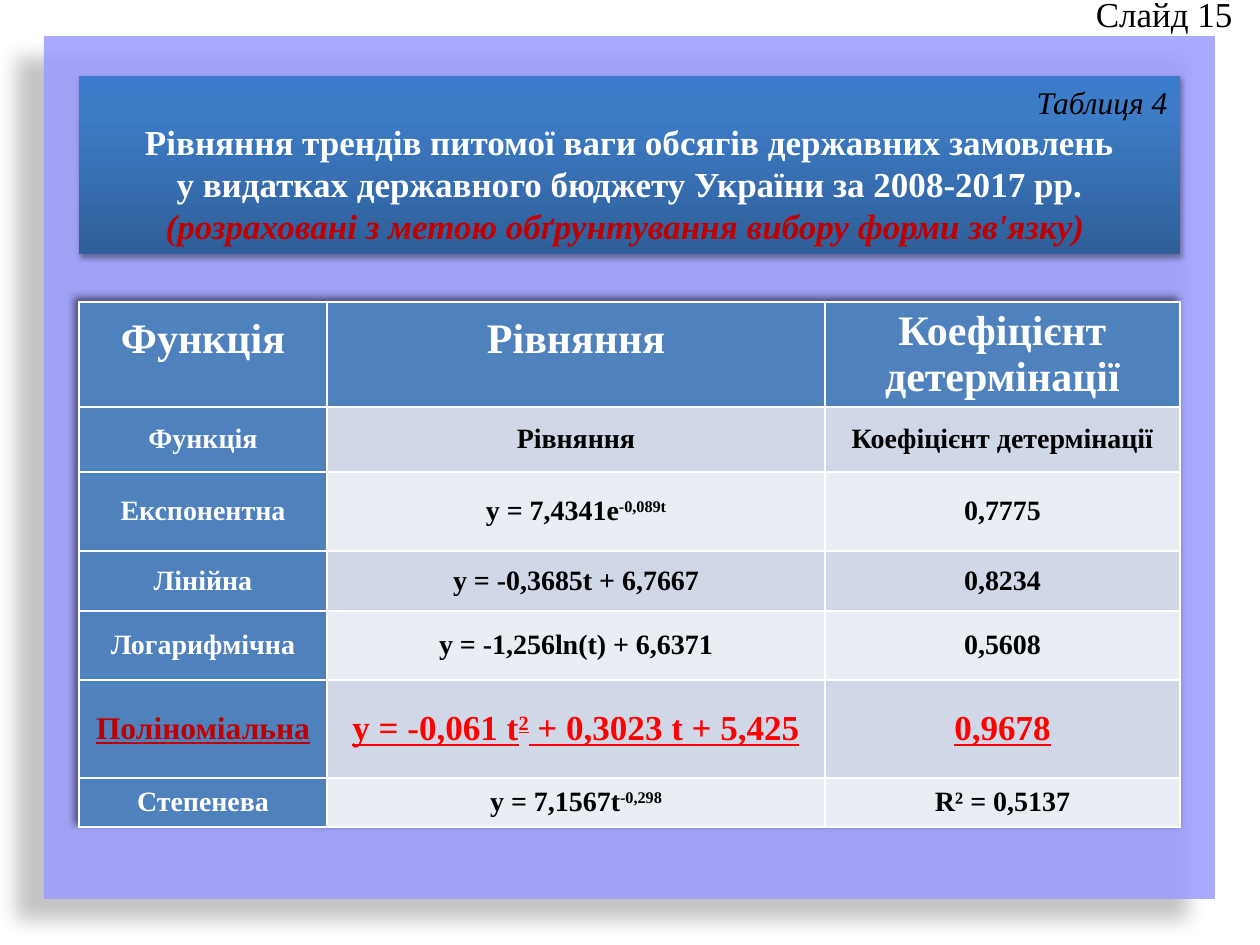
from dataclasses import dataclass
from lxml.etree import SubElement
from pptx import Presentation
from pptx.dml.color import RGBColor
from pptx.enum.shapes import MSO_SHAPE
from pptx.enum.text import MSO_ANCHOR, MSO_AUTO_SIZE, PP_ALIGN
from pptx.oxml.ns import qn
from pptx.util import Pt


@dataclass(frozen=True)
class Theme:
    font: str = "Times New Roman"
    black: str = "000000"
    white: str = "FFFFFF"
    dark: str = "C00000"
    red: str = "FF0000"
    panel: str = "9999FF"
    blue: str = "4F81BD"
    bands: tuple = ("D0D8E8", "E9EDF4")
    grad: tuple = ((0, "2F5F99"), (80, "3D7CC7"), (100, "3A7CCB"))
    head: int = 24
    large: int = 20
    mid: int = 18
    small: int = 16


THEME = Theme()
SCALE = 914400 / 126
COLS = (248, 498, 355)
HEIGHTS = (105, 65, 79, 60, 69, 98, 49)
ROWS = (
    ("Функція", "Рівняння", "Коефіцієнт детермінації"),
    ("Функція", "Рівняння", "Коефіцієнт детермінації"),
    ("Експонентна", "y = 7,4341e^-0,089t^", "0,7775"),
    ("Лінійна", "y = -0,3685t + 6,7667", "0,8234"),
    ("Логарифмічна", "y = -1,256ln(t) + 6,6371", "0,5608"),
    ("Поліноміальна", "y = -0,061 t^2^ + 0,3023 t + 5,425", "0,9678"),
    ("Степенева", "y = 7,1567t^-0,298^", "R² = 0,5137"),
)
BEST = 5


def px(n):
    return round(n * SCALE)


def place(shape, *box):
    shape.left, shape.top, shape.width, shape.height = map(px, box)


def style(para, size, color, align=PP_ALIGN.CENTER, bold=False, italic=False, under=False):
    para.alignment = align
    font = para.font
    font.name, font.size = THEME.font, Pt(size)
    font.bold, font.italic, font.underline = bold, italic, under
    font.color.rgb = RGBColor.from_string(color)


def paint(node, color, alpha=100):
    clr = SubElement(node, qn("a:srgbClr"), val=color)
    if alpha < 100:
        SubElement(clr, qn("a:alpha"), val=str(alpha * 1000))


def shade(effects, alpha, blur, dist, angle):
    node = SubElement(effects, qn("a:outerShdw"), blurRad=str(Pt(blur)),
                      dist=str(Pt(dist)), dir=str(angle * 60000),
                      algn="ctr", rotWithShape="0")
    paint(node, THEME.black, alpha)


def cast(shape, *shadow):
    shape.line.fill.background()
    shape.shadow.inherit = False
    shade(shape.element.spPr.find(qn("a:effectLst")), *shadow)


def add_panel(slide):
    panel = slide.shapes.add_shape(MSO_SHAPE.RECTANGLE, 0, 0, 0, 0)
    place(panel, 44, 36, 1171, 863)
    panel.fill.solid()
    panel.fill.fore_color.rgb = RGBColor.from_string(THEME.panel)
    clr = panel.element.spPr.find(qn("a:solidFill"))[0]
    SubElement(clr, qn("a:alpha"), val="83000")
    cast(panel, 28, 11.8, 19.7, 141)
    slide.shapes.title.element.addprevious(panel.element)


def add_label(slide):
    box = slide.shapes.add_textbox(0, 0, 0, 0)
    place(box, 1051, -14, 194, 55)
    box.text_frame.word_wrap = True
    para = box.text_frame.paragraphs[0]
    para.text = "Слайд 15"
    style(para, THEME.large, THEME.black, PP_ALIGN.RIGHT)


def fill_title(title):
    place(title, 79, 76, 1101, 178)
    title.fill.gradient()
    title.fill.gradient_angle = 90
    stops = title.element.spPr.find(qn("a:gradFill")).find(qn("a:gsLst"))
    for stop in list(stops):
        stops.remove(stop)
    for pos, color in THEME.grad:
        paint(SubElement(stops, qn("a:gs"), pos=str(pos * 1000)), color)
    cast(title, 35, 3.1, 1.8, 90)
    frame = title.text_frame
    frame.word_wrap = True
    frame.auto_size = MSO_AUTO_SIZE.NONE
    frame.vertical_anchor = MSO_ANCHOR.MIDDLE
    note, main_line, aside = frame.paragraphs[0], frame.add_paragraph(), frame.add_paragraph()
    note.text = "Таблиця 4"
    style(note, THEME.mid, THEME.black, PP_ALIGN.RIGHT, italic=True)
    main_line.text = ("Рівняння трендів питомої ваги обсягів державних замовлень\v"
                      "у видатках державного бюджету України за 2008-2017 рр.")
    style(main_line, THEME.large, THEME.white, bold=True)
    aside.text = "(розраховані з метою обґрунтування вибору форми зв'язку) "
    style(aside, THEME.large, THEME.dark, bold=True, italic=True)


def edge(cell):
    props = cell._tc.get_or_add_tcPr()
    for side in ("lnL", "lnR", "lnT", "lnB"):
        line = SubElement(props, qn(f"a:{side}"), w=str(Pt(1)))
        paint(SubElement(line, qn("a:solidFill")), THEME.white)


def look(row, col):
    if row == 0:
        return THEME.head, THEME.white
    if row == BEST:
        return (THEME.large, THEME.red) if col else (THEME.mid, THEME.dark)
    return THEME.small, THEME.black if col else THEME.white


def fill_cell(cell, row, col, text):
    edge(cell)
    cell.fill.solid()
    back = THEME.bands[(row - 1) % 2] if row and col else THEME.blue
    cell.fill.fore_color.rgb = RGBColor.from_string(back)
    cell.vertical_anchor = MSO_ANCHOR.MIDDLE
    cell.margin_left = cell.margin_right = px(9)
    cell.margin_top = 0
    cell.margin_bottom = px(30 if row == 0 and col < 2 else 0)
    para = cell.text_frame.paragraphs[0]
    for i, part in enumerate(text.split("^")):
        if part:
            run = para.add_run()
            run.text = part
            if i % 2:
                run.font._element.set("baseline", "30000")
    size, color = look(row, col)
    style(para, size, color, bold=True, under=row == BEST)


def add_grid(slide):
    frame = slide.shapes.add_table(len(ROWS), len(COLS), px(79), px(302),
                                   px(sum(COLS)), px(sum(HEIGHTS)))
    table = frame.table
    effects = SubElement(table._tbl.tblPr, qn("a:effectLst"))
    table._tbl.tblPr.insert(0, effects)
    shade(effects, 50, 4, 3, 225)
    for col, width in zip(table.columns, COLS):
        col.width = px(width)
    for r, (height, texts) in enumerate(zip(HEIGHTS, ROWS)):
        table.rows[r].height = px(height)
        for c, text in enumerate(texts):
            fill_cell(table.cell(r, c), r, c, text)


def main():
    deck = Presentation()
    deck.slide_width, deck.slide_height = px(1260), px(945)
    slide = deck.slides.add_slide(deck.slide_layouts[5])
    add_panel(slide)
    add_label(slide)
    fill_title(slide.shapes.title)
    add_grid(slide)
    deck.save("out.pptx")


if __name__ == "__main__":
    main()
